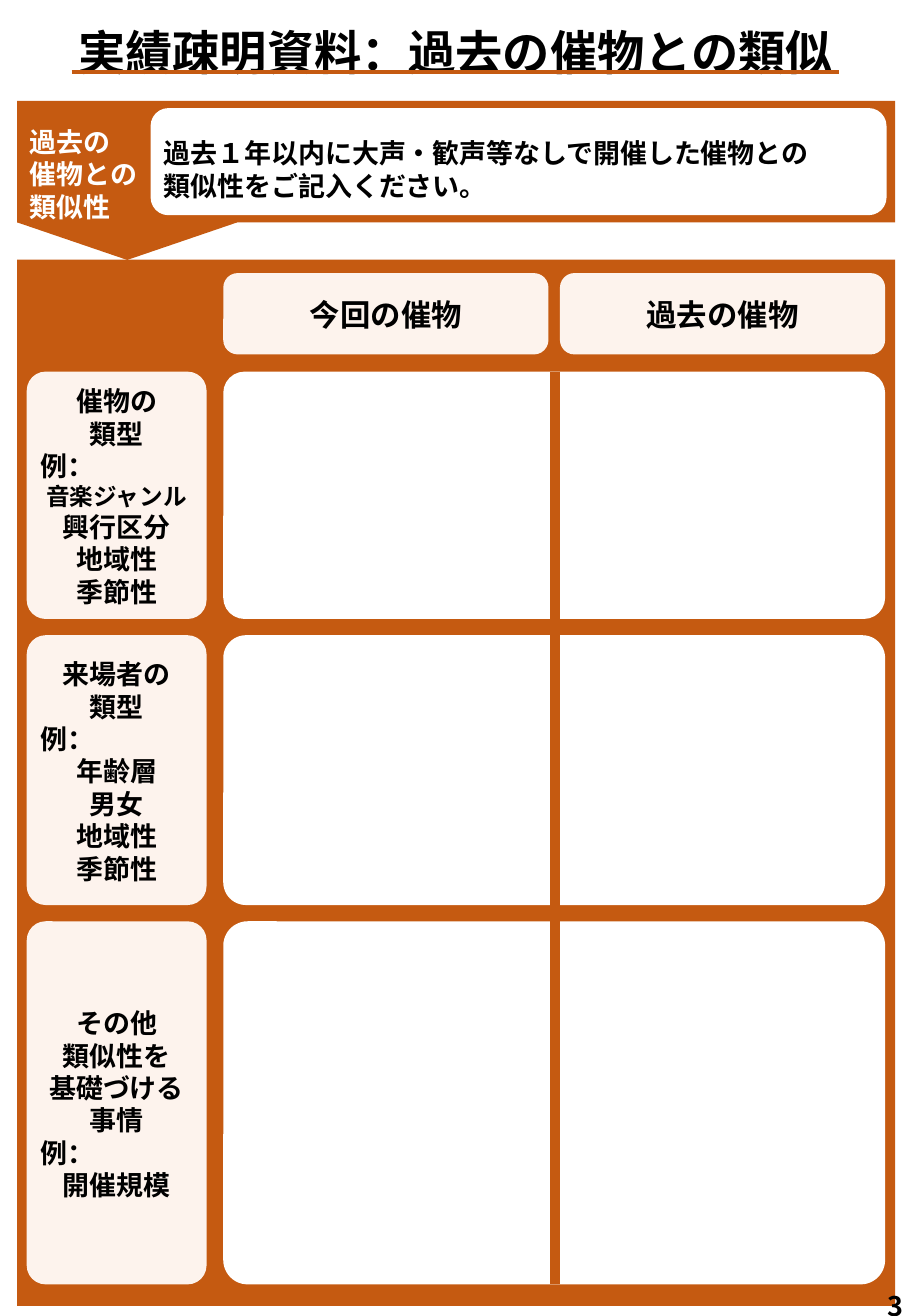
from collections import namedtuple

from lxml import etree
from pptx import Presentation
from pptx import util as u
from pptx.dml.color import RGBColor
from pptx.enum import shapes, text
from pptx.oxml import ns

FONT = "Noto Sans CJK JP"
ORANGE, CREAM, WHITE, BLACK = "C55A11", "FDF3ED", "FFFFFF", "000000"
LEFT, CENTER = text.PP_ALIGN.LEFT, text.PP_ALIGN.CENTER
TOP, MIDDLE = text.MSO_ANCHOR.TOP, text.MSO_ANCHOR.MIDDLE
SHAPE = shapes.MSO_SHAPE
EXAMPLE = "例："
SMALL_LINE = "音楽ジャンル"

Box = namedtuple("Box", "left top width height")
Row = namedtuple("Row", "height field_corner lines")

ROWS = [
    Row(5.17, 0.086, ["催物の", "類型", EXAMPLE, SMALL_LINE, "興行区分", "地域性", "季節性"]),
    Row(5.64, 0.084, ["来場者の", "類型", EXAMPLE, "年齢層", "男女", "地域性", "季節性"]),
    Row(7.59, 0.067, ["その他", "類似性を", "基礎づける事情", EXAMPLE, "開催規模"]),
]


def color(value):
    return RGBColor.from_string(value)


def place(shape, box):
    shape.left, shape.top, shape.width, shape.height = map(u.Cm, box)


def write(shape, lines, size=16, fill=BLACK, align=LEFT, anchor=TOP, insets=(0, 0, 0, 0)):
    frame = shape.text_frame
    frame.word_wrap = True
    frame.auto_size = text.MSO_AUTO_SIZE.NONE
    frame.vertical_anchor = anchor
    frame.margin_left, frame.margin_top, frame.margin_right, frame.margin_bottom = map(u.Cm, insets)
    for index, line in enumerate(lines):
        paragraph = frame.add_paragraph() if index else frame.paragraphs[0]
        paragraph.alignment = LEFT if line == EXAMPLE else align
        line_size = 14 if line == SMALL_LINE else size
        paragraph.line_spacing = u.Pt(round(line_size * 1.2, 1))
        paragraph.space_before = paragraph.space_after = u.Pt(0)
        run = paragraph.add_run()
        run.text = line
        run.font.size = u.Pt(line_size)
        run.font.bold = True
        run.font.name = FONT
        run.font.color.rgb = color(fill)
        east_asian = etree.SubElement(run._r.get_or_add_rPr(), ns.qn("a:ea"))
        east_asian.set("typeface", FONT)


def add_text(slide, box, lines, **formats):
    shape = slide.shapes.add_textbox(*map(u.Cm, box))
    write(shape, lines, **formats)


def add_panel(slide, box, fill, kind=SHAPE.RECTANGLE, corner=None):
    shape = slide.shapes.add_shape(kind, *map(u.Cm, box))
    shape.shadow.inherit = False
    shape.fill.solid()
    shape.fill.fore_color.rgb = color(fill)
    shape.line.fill.background()
    if corner is not None:
        shape.adjustments[0] = corner
    return shape


def add_card(slide, box, lines, corner, size=16):
    card = add_panel(slide, box, CREAM, SHAPE.ROUNDED_RECTANGLE, corner)
    write(card, lines, size=size, align=CENTER, anchor=MIDDLE, insets=(0.18, 0.14, 0.18, 0.1))


def add_line(slide, start, end, width):
    line = slide.shapes.add_connector(shapes.MSO_CONNECTOR.STRAIGHT, *map(u.Cm, start + end))
    line.line.color.rgb = color(ORANGE)
    line.line.width = u.Pt(width)
    etree.SubElement(line._element.spPr, ns.qn("a:effectLst"))


def build_title(slide, box):
    title = slide.shapes.title
    place(title, box)
    write(title, ["実績疎明資料：過去の催物との類似"], size=28, align=CENTER)
    line_top = box.top + 1.02
    add_line(slide, (box.left + 0.28, line_top), (box.left + box.width - 0.28, line_top), 2.25)


def build_banner(slide, box):
    bottom = box.top + box.height
    length, breadth = 1.57, 4.6
    pointer_box = Box(box.left + (breadth - length) / 2, bottom - breadth / 2, length, breadth)
    pointer = add_panel(slide, pointer_box, ORANGE, SHAPE.PENTAGON)
    pointer.rotation = 90
    add_panel(slide, box, ORANGE)
    note = Box(box.left + 2.79, box.top + 0.15, 15.39, 2.24)
    add_panel(slide, note, WHITE, SHAPE.ROUNDED_RECTANGLE)
    add_text(slide, Box(box.left + 0.26, box.top + 0.51, 2.5, 2.03),
             ["過去の", "催物との", "類似性"], fill=WHITE)
    add_text(slide, Box(note.left + 0.28, note.top + 0.6, 15, 1.4),
             ["過去１年以内に大声・歓声等なしで開催した催物との", "類似性をご記入ください。"])


def build_form(slide, box):
    label_left, label_width = box.left + 0.2, 3.76
    field_left, field_width = box.left + 4.31, 13.84
    header_width, row_gap = 6.8, 0.34
    add_panel(slide, box, ORANGE)
    header_lefts = (field_left, field_left + field_width - header_width)
    for left, heading in zip(header_lefts, ("今回の催物", "過去の催物")):
        add_card(slide, Box(left, box.top + 0.28, header_width, 1.7), [heading], 0.178, size=18)
    rows_top = top = box.top + 2.34
    for row in ROWS:
        add_card(slide, Box(label_left, top, label_width, row.height), row.lines, 0.105)
        add_panel(slide, Box(field_left, top, field_width, row.height), WHITE,
                  SHAPE.ROUNDED_RECTANGLE, row.field_corner)
        top += row.height + row_gap
    middle = field_left + field_width / 2 + 0.02
    add_line(slide, (middle, rows_top), (middle, top - row_gap), 6)


def main():
    presentation = Presentation()
    presentation.slide_width, presentation.slide_height = u.Cm(19.05), u.Cm(27.51)
    slide = presentation.slides.add_slide(presentation.slide_layouts[5])
    build_banner(slide, Box(0.36, 2.11, 18.36, 2.54))
    build_form(slide, Box(0.36, 5.43, 18.36, 21.87))
    build_title(slide, Box(1.22, 0.48, 16.61, 1.2))
    add_text(slide, Box(18.56, 26.95, 0.49, 0.56), ["3"])
    presentation.save("out.pptx")


if __name__ == "__main__":
    main()
